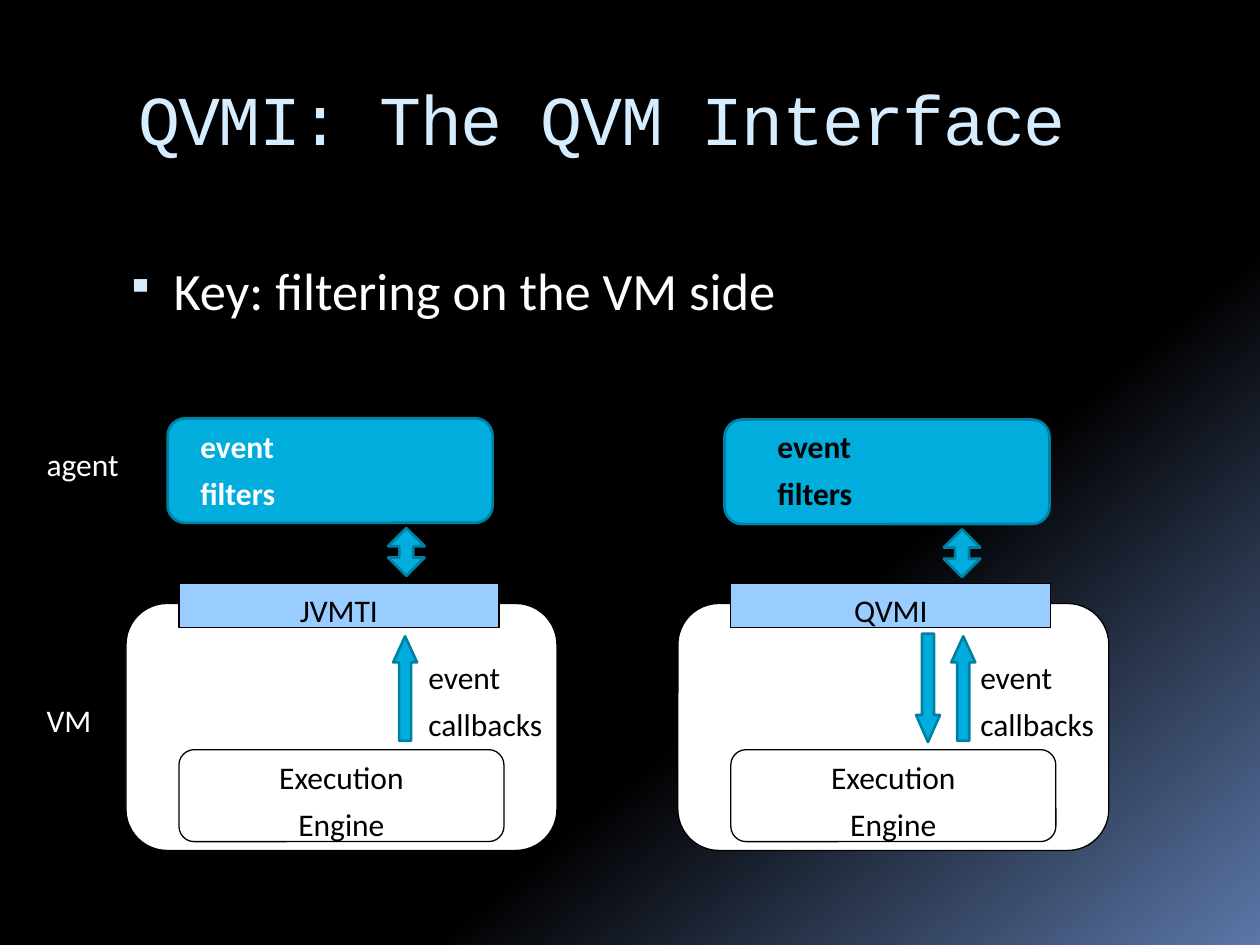
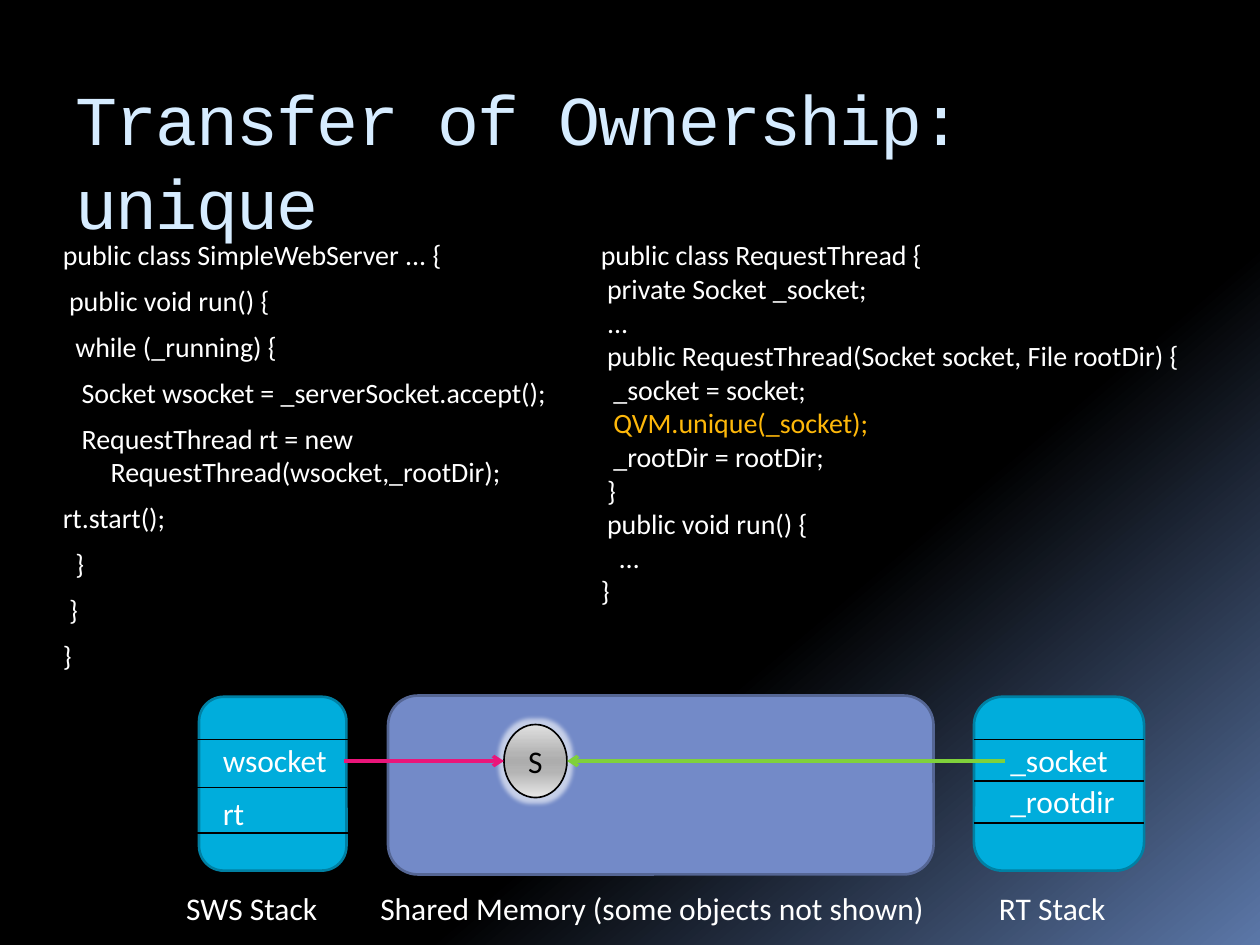
from copy import deepcopy

from pptx import Presentation
from pptx import oxml
from pptx import util as u
from pptx.dml.color import RGBColor
from pptx.enum import shapes, text
from pptx.oxml import ns

BLACK = RGBColor(0x00, 0x00, 0x00)
WHITE = RGBColor(0xFF, 0xFF, 0xFF)
GLOW_BLUE = RGBColor(0x5B, 0x77, 0xA8)
ICE = RGBColor(0xD6, 0xEC, 0xFF)
CYAN = RGBColor(0x00, 0xAD, 0xDC)
TEAL = RGBColor(0x00, 0x80, 0xA3)
SKY = RGBColor(0x99, 0xCC, 0xFF)
PERIWINKLE = RGBColor(0x73, 0x8A, 0xC8)
SLATE = RGBColor(0x55, 0x66, 0x94)
AMBER = RGBColor(0xFE, 0xB8, 0x0A)
PINK = RGBColor(0xEA, 0x15, 0x7A)
GREEN = RGBColor(0x7F, 0xD1, 0x3B)
SILVER = [(0, "E1E1E1"), (40, "B4B4B4"), (50, "ADADAD"), (65, "B4B4B4"), (100, "E7E7E7")]
KIND = shapes.MSO_SHAPE
STEP = 0.05


def draw(page, kind, at, fill=CYAN, line=TEAL, weight=1.5, adjust=()):
    shape = page.shapes.add_shape(kind, *map(u.Inches, at))
    shape.shadow.inherit = False
    shape.fill.solid()
    shape.fill.fore_color.rgb = fill
    shape.line.color.rgb = line
    shape.line.width = u.Pt(weight)
    for index, value in enumerate(adjust):
        shape.adjustments[index] = value
    return shape


def write(page, lines, at=None, box=None, size=18, color=WHITE, font="Calibri", bold=False,
          align=text.PP_ALIGN.LEFT, anchor=text.MSO_ANCHOR.TOP, inset=(0.1, 0.05),
          wrap=True, spacing=None, before=0, margin=0, hanging=0):
    box = box or page.shapes.add_textbox(*map(u.Inches, at))
    frame = box.text_frame
    frame.word_wrap = wrap
    frame.vertical_anchor = anchor
    frame.margin_left = frame.margin_right = u.Inches(inset[0])
    frame.margin_top = frame.margin_bottom = u.Inches(inset[1])
    for index, line in enumerate(lines):
        steps, words = line if isinstance(line, tuple) else (0, line)
        para = frame.add_paragraph() if index else frame.paragraphs[0]
        para.alignment = align
        para.space_before = u.Pt(before)
        if spacing:
            para.line_spacing = spacing
        properties = para._p.get_or_add_pPr()
        left = margin if hanging else margin + steps * STEP
        first = steps * STEP - hanging if hanging else 0
        properties.set("marL", str(u.Inches(left)))
        properties.set("indent", str(u.Inches(first)))
        span = para.add_run()
        span.text = words
        span.font.size = u.Pt(size)
        span.font.name = font
        span.font.bold = bold
        span.font.color.rgb = color
    return frame


deck = Presentation()
deck.slide_width = u.Inches(10)
deck.slide_height = u.Inches(7.5)

pages = []
for title, left, width in [("QVMI: The QVM Interface", 1, 8.5),
                           ("Transfer of Ownership: unique", 0.5, 9)]:
    page = deck.slides.add_slide(deck.slide_layouts[6])
    backdrop = page.background.fill
    backdrop.gradient()
    backdrop.gradient_angle = 310
    for stop, position, color in zip(backdrop.gradient_stops, (0.65, 1), (BLACK, GLOW_BLUE)):
        stop.position = position
        stop.color.rgb = color
    frame = write(page, [title], at=(left, 0.56, width, 1), size=40, color=ICE,
                  font="Courier New", inset=(0.1, 0.04), spacing=u.Pt(48))
    frame.paragraphs[0].runs[0].font._element.set("spc", "-100")
    pages.append(page)
interface, ownership = pages

key = write(interface, ["Key: filtering on the VM side"], at=(0.83, 2, 8.5, 1), size=30,
            before=7, margin=0.45, hanging=0.38)
bullet = key.paragraphs[0]._p.get_or_add_pPr()
for tag in (f'<a:buClr {ns.nsdecls("a")}><a:srgbClr val="{ICE}"/></a:buClr>',
            f'<a:buSzPct {ns.nsdecls("a")} val="75000"/>',
            f'<a:buChar {ns.nsdecls("a")} char="▪"/>'):
    bullet.append(oxml.parse_xml(tag))

label = dict(inset=(0.09, 0.04), spacing=1.24)
centered = dict(label, color=BLACK, align=text.PP_ALIGN.CENTER,
                anchor=text.MSO_ANCHOR.MIDDLE, wrap=False)
outline = dict(line=BLACK, weight=0.75)

for name, left, agent, filters, filter_color, link, callback in [
        ("JVMTI", 1, (1.33, 3.32), 1.5, WHITE, (3.08, 4.19), 3.12),
        ("QVMI", 5.38, (5.75, 3.33), 6.08, BLACK, (7.49, 4.2), 7.55)]:
    draw(interface, KIND.ROUNDED_RECTANGLE, (*agent, 2.58, 0.83))
    write(interface, ["event", "filters"], at=(filters, 3.28, 1.1, 0.8),
          color=filter_color, bold=True, **label)
    draw(interface, KIND.ROUNDED_RECTANGLE, (left, 4.79, 3.42, 1.96), fill=WHITE, **outline)
    engine = draw(interface, KIND.ROUNDED_RECTANGLE, (left + 0.42, 5.95, 2.58, 0.73),
                  fill=WHITE, **outline)
    write(interface, ["Execution", "Engine"], box=engine, **centered)
    tool_interface = draw(interface, KIND.RECTANGLE, (left + 0.42, 4.63, 2.54, 0.35),
                          fill=SKY, **outline)
    write(interface, [name], box=tool_interface, **centered)
    write(interface, ["event", "callbacks"], at=(left + 2.31, 5.11, 1.14, 0.69),
          color=BLACK, wrap=False, **label)
    draw(interface, KIND.UP_ARROW, (callback, 5.05, 0.19, 0.83), adjust=(0.5, 1.09))
    draw(interface, KIND.UP_DOWN_ARROW, (*link, 0.29, 0.38), adjust=(0.44, 0.38))

draw(interface, KIND.DOWN_ARROW, (7.27, 5.03, 0.19, 0.86), adjust=(0.5, 1.13))
for name, top in [("agent", 3.42), ("VM", 5.45)]:
    write(interface, [name], at=(0.28, top, 1.08, 0.8), **label)

server_code = [
    "public class SimpleWebServer ... {",
    (1, "public void run() {"),
    (2, "while (_running) {"),
    (3, "Socket wsocket = _serverSocket.accept();"),
    (3, "RequestThread rt = new RequestThread(wsocket,_rootDir);"),
    "rt.start();",
    (2, "}"),
    (1, "}"),
    "}",
]
thread_code = [
    "public class RequestThread {",
    (1, "private Socket _socket;"),
    (1, "..."),
    (1, "public RequestThread(Socket socket, File rootDir) {"),
    (2, "_socket = socket;"),
    (2, "QVM.unique(_socket);"),
    (2, "_rootDir = rootDir;"),
    (1, "}"),
    (1, "public void run() {"),
    (3, "…"),
    "}",
]
write(ownership, server_code, at=(0.33, 1.84, 4.17, 5), size=16, before=7,
      margin=0.45, hanging=0.38)
thread = write(ownership, thread_code, at=(4.67, 1.84, 5, 3.06), size=16)
thread.paragraphs[5].runs[0].font.color.rgb = AMBER

for left, top, width, height, fill, line in [(1.58, 5.53, 1.17, 1.38, CYAN, TEAL),
                                             (3.08, 5.52, 4.33, 1.42, PERIWINKLE, SLATE),
                                             (7.73, 5.53, 1.35, 1.38, CYAN, TEAL)]:
    draw(ownership, KIND.ROUNDED_RECTANGLE, (left, top, width, height), fill, line)

socket = draw(ownership, KIND.OVAL, (4, 5.75, 0.5, 0.58), line=BLACK, weight=0.94)
socket.fill.gradient()
socket.fill.gradient_angle = 270
stops = socket._element.spPr.find(".//" + ns.qn("a:gsLst"))
for _ in SILVER[2:]:
    stops.append(deepcopy(stops[0]))
for stop, (position, shade) in zip(socket.fill.gradient_stops, SILVER):
    stop.position = position / 100
    stop.color.rgb = RGBColor.from_string(shade)
socket._element.spPr.find(ns.qn("a:effectLst")).append(oxml.parse_xml(
    f'<a:glow {ns.nsdecls("a")} rad="63500"><a:srgbClr val="FFFFFF">'
    '<a:alpha val="60000"/></a:srgbClr></a:glow>'))
write(ownership, ["S"], box=socket, color=BLACK, align=text.PP_ALIGN.CENTER,
      anchor=text.MSO_ANCHOR.MIDDLE)

for name, left, top, width in [("wsocket", 1.67, 5.83, 1.06), ("rt", 1.67, 6.25, 0.37),
                               ("_socket", 7.92, 5.83, 1), ("_rootdir", 7.92, 6.16, 1.04),
                               ("SWS Stack", 1.38, 7.01, 1.33),
                               ("Shared Memory (some objects not shown)", 2.92, 7.01, 4.6),
                               ("RT Stack", 7.83, 7.01, 1.12)]:
    write(ownership, [name], at=(left, top, width, 0.4), wrap=False)

slots = [(left, y, left + 1.35, BLACK, 0.94)
         for left, y in [(1.42, 5.87), (1.4, 6.25), (1.43, 6.61),
                         (7.73, 5.87), (7.73, 6.2), (7.73, 6.53)]]
references = [(2.73, 6.04, 4, PINK, 2), (7.98, 6.04, 4.5, GREEN, 2)]
for start, y, end, color, weight in slots + references:
    connector = ownership.shapes.add_connector(
        shapes.MSO_CONNECTOR.STRAIGHT, *map(u.Inches, (start, y, end, y)))
    connector.line.color.rgb = color
    connector.line.width = u.Pt(weight)
    if color != BLACK:
        connector.line._get_or_add_ln().append(
            oxml.parse_xml(f'<a:tailEnd {ns.nsdecls("a")} type="arrow"/>'))
    connector._element.spPr.append(oxml.parse_xml(f'<a:effectLst {ns.nsdecls("a")}/>'))

deck.save("out.pptx")
